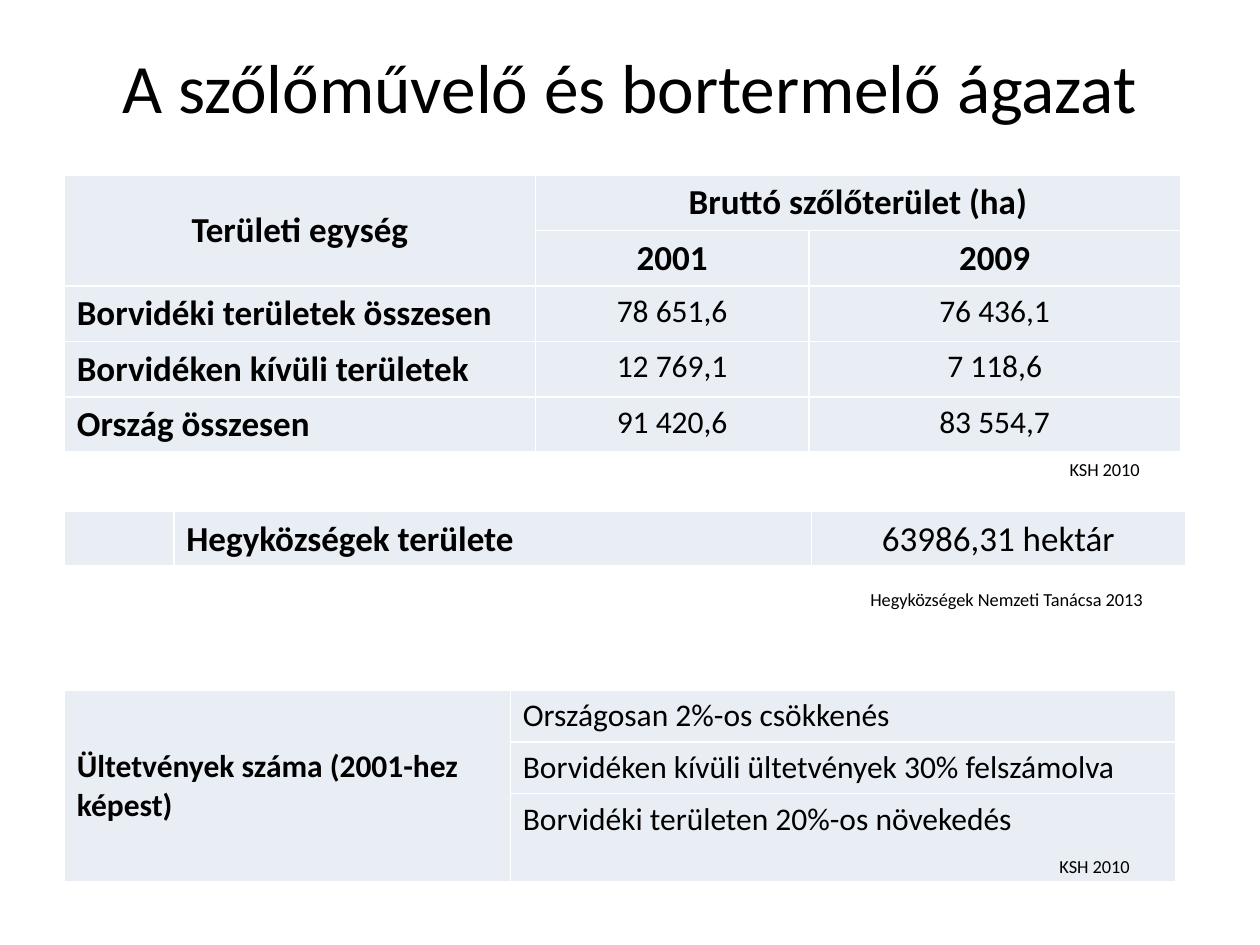
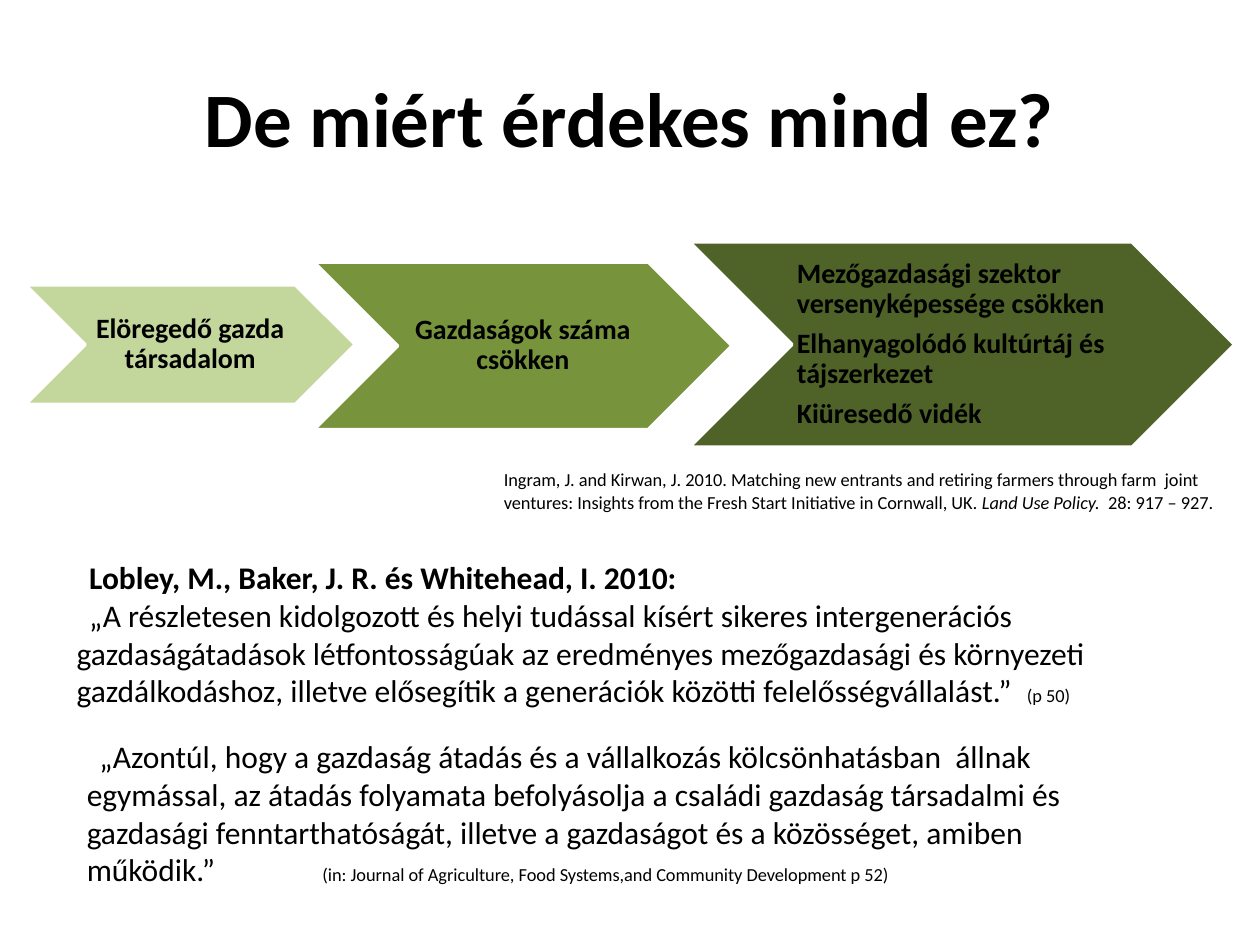
"""Build two slides on the Hungarian wine sector and farm succession."""
from lxml import etree
from pptx import Presentation, util as u
from pptx.dml.color import RGBColor
from pptx.enum import shapes, text
from pptx.oxml import ns

FONT = "Calibri"
BLACK, WHITE, CELL_FILL = "000000", "FFFFFF", "E9EDF4"
LEFT, CENTER = text.PP_ALIGN.LEFT, text.PP_ALIGN.CENTER
TOP, MIDDLE = text.MSO_ANCHOR.TOP, text.MSO_ANCHOR.MIDDLE
BODY, SMALL = 18, 10.5


def color(hex_string):
    return RGBColor.from_string(hex_string)


def add_text(slide, box, paragraphs, align=LEFT, anchor=TOP):
    """Add a wrapped text box; each paragraph is a list of (text, size, bold, italic)."""
    shape = slide.shapes.add_textbox(*[u.Inches(value) for value in box])
    frame = shape.text_frame
    frame.word_wrap = True
    frame.vertical_anchor = anchor
    for index, runs in enumerate(paragraphs):
        paragraph = frame.paragraphs[0] if index == 0 else frame.add_paragraph()
        paragraph.alignment = align
        for content, size, bold, italic in runs:
            run = paragraph.add_run()
            run.text = content
            run.font.name, run.font.size = FONT, u.Pt(size)
            run.font.bold, run.font.italic = bold, italic
            run.font.color.rgb = color(BLACK)
    return frame


presentation = Presentation()
presentation.slide_width, presentation.slide_height = u.Inches(10), u.Inches(7.5)
blank = presentation.slide_layouts[6]
sector_slide = presentation.slides.add_slide(blank)
reasons_slide = presentation.slides.add_slide(blank)

titles = [
    (sector_slide, 0.77, "A szőlőművelő és bortermelő ágazat", 39.6, False),
    (reasons_slide, 1.25, "De miért érdekes mind ez?", 44, True),
]
for slide, height, title, size, bold in titles:
    add_text(slide, (0.5, 0.3, 9, height), [[(title, size, bold, False)]], CENTER, MIDDLE)

heading = (20, True, CENTER)
label = (20, True, LEFT)
number = (BODY, False, CENTER)
statement = (BODY, False, LEFT)
areas = [
    ("Borvidéki területek összesen", "78 651,6", "76 436,1"),
    ("Borvidéken kívüli területek", "12 769,1", "7 118,6"),
    ("Ország összesen", "91 420,6", "83 554,7"),
]
area_cells = {
    (0, 0): ("Területi egység", heading),
    (0, 1): ("Bruttó szőlőterület (ha)", heading),
    (1, 1): ("2001", heading),
    (1, 2): ("2009", heading),
}
for row, (name, *values) in enumerate(areas, start=2):
    area_cells[row, 0] = (name, label)
    for column, value in enumerate(values, start=1):
        area_cells[row, column] = (value, number)
community_cells = {
    (0, 1): ("Hegyközségek területe", label),
    (0, 2): ("63986,31 hektár", (20, False, CENTER)),
}
plantation_cells = {
    (0, 0): ("Ültetvények száma (2001-hez képest)", (BODY, True, LEFT)),
    (0, 1): ("Országosan 2%-os csökkenés", statement),
    (1, 1): ("Borvidéken kívüli ültetvények 30% felszámolva", statement),
    (2, 1): ("Borvidéki területen 20%-os növekedés", statement),
}
tables = [
    (1.39, [3.74, 2.17, 2.95], [0.44] * 5, area_cells, [((0, 0), (1, 0)), ((0, 1), (0, 2))]),
    (4.06, [0.87, 5.06, 2.97], [0.43], community_cells, []),
    (5.48, [3.54, 5.28], [0.41, 0.41, 0.69], plantation_cells, [((0, 0), (2, 0))]),
]
for top, widths, heights, contents, merges in tables:
    table = sector_slide.shapes.add_table(
        len(heights), len(widths), u.Inches(0.51), u.Inches(top),
        u.Inches(sum(widths)), u.Inches(sum(heights))).table
    table.first_row = table.horz_banding = False
    for column, width in zip(table.columns, widths):
        column.width = u.Inches(width)
    for row, height in zip(table.rows, heights):
        row.height = u.Inches(height)
    for cell in table.iter_cells():
        properties = cell._tc.get_or_add_tcPr()
        for side in ("lnL", "lnR", "lnT", "lnB"):
            border = etree.SubElement(properties, ns.qn("a:" + side), w=str(u.Pt(1)))
            fill = etree.SubElement(border, ns.qn("a:solidFill"))
            etree.SubElement(fill, ns.qn("a:srgbClr"), val=WHITE)
        cell.fill.solid()
        cell.fill.fore_color.rgb = color(CELL_FILL)
    for first, last in merges:
        table.cell(*first).merge(table.cell(*last))
    for position, (content, (size, bold, align)) in contents.items():
        cell = table.cell(*position)
        cell.text_frame.text = content
        cell.vertical_anchor = MIDDLE if position == (0, 0) else TOP
        paragraph = cell.text_frame.paragraphs[0]
        paragraph.alignment = align
        font = paragraph.runs[0].font
        font.name, font.size, font.bold = FONT, u.Pt(size), bold
        font.color.rgb = color(BLACK)

steps = [
    ((0.2, 2.26, 2.62, 0.95), "C3D69B", CENTER, ["Elöregedő gazda társadalom"]),
    ((2.49, 2.08, 3.32, 1.33), "77933C", CENTER, ["Gazdaságok száma csökken"]),
    ((5.47, 1.92, 4.33, 1.63), "4F6228", LEFT, [
        "Mezőgazdasági szektor versenyképessége csökken",
        "Elhanyagolódó kultúrtáj és tájszerkezet",
        "Kiüresedő vidék",
    ]),
]
for (left, top, width, height), fill, align, lines in steps:
    chevron = reasons_slide.shapes.add_shape(
        shapes.MSO_SHAPE.CHEVRON,
        u.Inches(left), u.Inches(top), u.Inches(width), u.Inches(height))
    chevron.shadow.inherit = False
    chevron.fill.solid()
    chevron.fill.fore_color.rgb = color(fill)
    chevron.line.color.rgb = color(WHITE)
    chevron.line.width = u.Pt(2)
    body = (left + height / 2, top, width - height, height)
    frame = add_text(
        reasons_slide, body, [[(line, 16, True, False)] for line in lines], align, MIDDLE)
    frame.margin_left = frame.margin_right = u.Inches(0.04)
    frame.margin_top = frame.margin_bottom = u.Inches(0.02)
    for paragraph in frame.paragraphs:
        paragraph.line_spacing = 0.9
        paragraph.space_after = u.Pt(5.6)

add_text(reasons_slide, (3.9, 3.67, 5.91, 0.45), [[
    ("Ingram, J. and Kirwan, J. 2010. Matching new entrants and retiring farmers through "
     "farm  joint ventures: Insights from the Fresh Start Initiative in Cornwall, UK",
     SMALL, False, False),
    (". Land Use Policy.", SMALL, False, True),
    ("  28: 917 – 927.", SMALL, False, False),
]])

quotes = [
    ((0.51, 4.38, 9.21, 1.31), [
        [("Lobley, M., Baker, J. R. és Whitehead, I. 2010:", BODY, True, False)],
        [("„A részletesen kidolgozott és helyi tudással kísért sikeres intergenerációs "
          "gazdaságátadások létfontosságúak az eredményes mezőgazdasági és környezeti "
          "gazdálkodáshoz, illetve elősegítik a generációk közötti felelősségvállalást.”  ",
          BODY, False, False),
         ("(p 50)", SMALL, False, False)],
    ]),
    ((0.59, 5.8, 8.58, 1.31), [
        [("„Azontúl, hogy a gazdaság átadás és a vállalkozás kölcsönhatásban  állnak "
          "egymással, az átadás folyamata befolyásolja a családi gazdaság társadalmi és "
          "gazdasági fenntarthatóságát, illetve a gazdaságot és a közösséget, amiben "
          "működik.”", BODY, False, False)],
    ]),
]
for box, paragraphs in quotes:
    frame = add_text(reasons_slide, box, paragraphs)
    for paragraph in frame.paragraphs:
        properties = paragraph._p.get_or_add_pPr()
        properties.set("marL", "0")
        properties.set("indent", str(u.Inches(0.1)))

sources = [
    (sector_slide, (8.39, 3.59, 1.02, 0.29), "KSH 2010"),
    (sector_slide, (6.81, 4.62, 2.44, 0.28), "Hegyközségek Nemzeti Tanácsa 2013"),
    (sector_slide, (8.31, 6.74, 1.02, 0.29), "KSH 2010"),
    (reasons_slide, (2.46, 6.8, 5, 0.29),
     "(in: Journal of Agriculture, Food Systems,and Community Development p 52)"),
]
for slide, box, source in sources:
    add_text(slide, box, [[(source, SMALL, False, False)]])

presentation.save("out.pptx")
